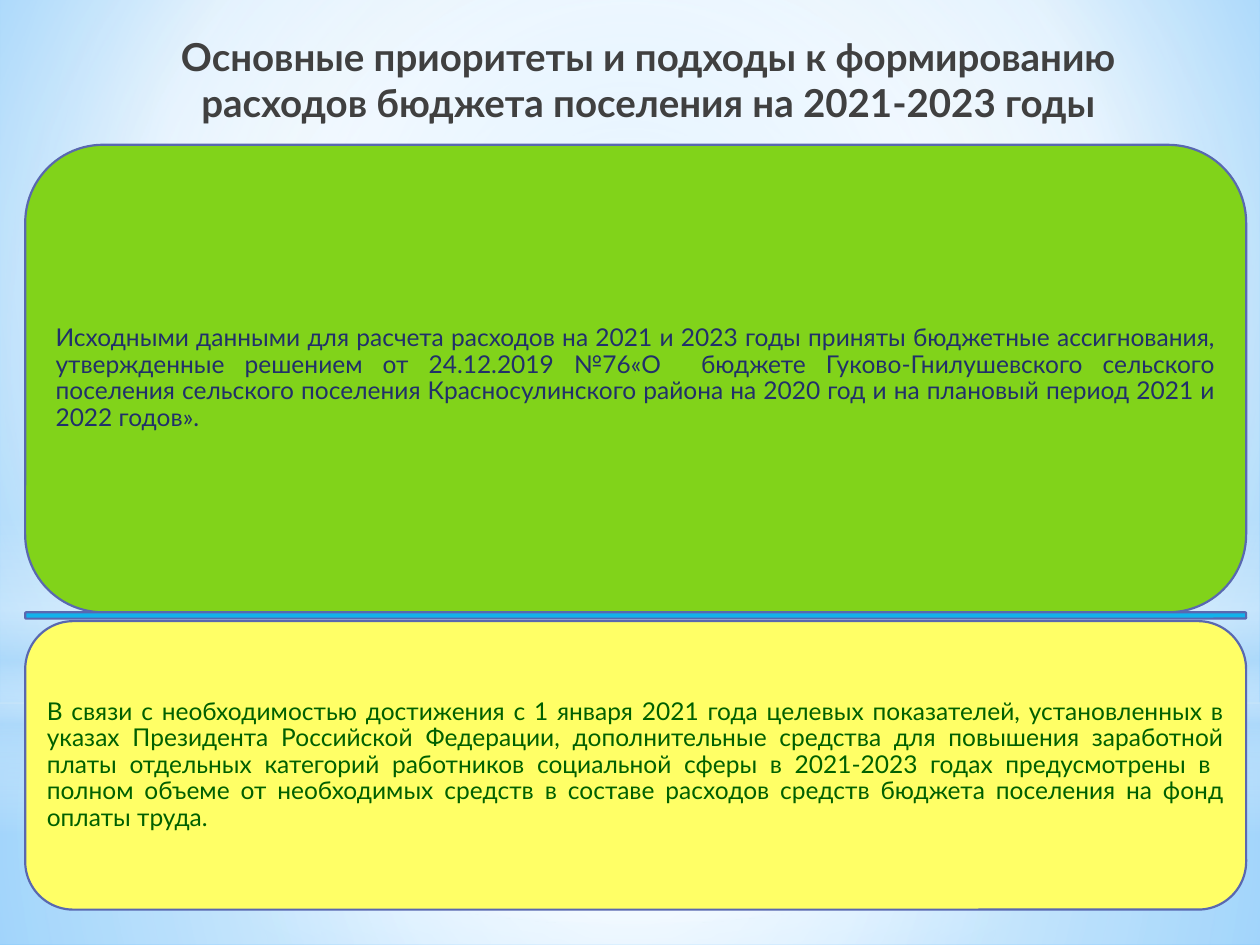
"""Build a slide on the spending priorities of a settlement budget for 2021-2023."""
from dataclasses import dataclass
from typing import NamedTuple

from lxml.etree import SubElement
from pptx import Presentation
from pptx.dml.color import RGBColor
from pptx.enum.shapes import MSO_SHAPE as Preset
from pptx.enum.text import MSO_ANCHOR as Anchor, MSO_AUTO_SIZE as AutoSize, PP_ALIGN as Align
from pptx.oxml.ns import qn
from pptx.util import Inches, Pt

WIDTH, HEIGHT = Inches(10), Inches(7.5)
TITLE_ONLY = 5


@dataclass(frozen=True)
class Theme:
    font: str = "Lato"
    title_size: float = 22
    body_size: float = 14
    line_width: float = 1.25
    title: str = "404040"
    outline: str = "5968B0"
    green: str = "81D31A"
    blue: str = "12B2EB"
    yellow: str = "FFFF66"
    navy: str = "21306A"
    forest: str = "006000"
    white: str = "FFFFFF"
    haze: str = "B4DCFA"
    sky: str = "9ED5FF"
    deep_sky: str = "5BB9FF"


THEME = Theme()


class Area(NamedTuple):
    """Percentages of the slide's width and height."""
    left: float
    top: float
    width: float
    height: float

    def emu(self) -> tuple[int, ...]:
        return tuple(round(share * side / 100) for share, side in zip(self, (WIDTH, HEIGHT) * 2))


class Stop(NamedTuple):
    position: int
    color: str
    alpha: int = 100


class Glow(NamedTuple):
    area: Area
    stops: tuple[Stop, ...]
    preset: Preset = Preset.RECTANGLE
    linear: bool = False


class Panel(NamedTuple):
    top: float
    height: float
    fill: str
    text: str = ""
    color: str = THEME.navy


WHITE, HAZE = THEME.white, THEME.haze
SKY_STOPS = (Stop(0, THEME.sky), Stop(60, WHITE), Stop(100, THEME.deep_sky))
GLOWS = (
    Glow(Area(0, 74.4, 100, 25.6), (Stop(0, WHITE, 91), Stop(37, WHITE, 76), Stop(100, HAZE, 79))),
    Glow(Area(0, 0, 100, 74.4), (Stop(0, WHITE, 89), Stop(48, WHITE, 62), Stop(100, HAZE, 79))),
    Glow(Area(0, 54.93, 100, 33.33),
         (Stop(0, WHITE, 0), Stop(29, WHITE, 30), Stop(45, HAZE, 40),
          Stop(55, WHITE, 26), Stop(65, HAZE, 60), Stop(100, WHITE, 0)), linear=True),
    Glow(Area(0, 23.33, 100, 74.4), (Stop(0, WHITE), Stop(56, WHITE, 0)), Preset.OVAL),
)
HEADING = "Основные приоритеты и подходы к формированию расходов бюджета поселения на 2021-2023 годы"
PANELS = (
    Panel(15.33, 49.47, THEME.green,
          "Исходными данными для расчета расходов на 2021 и 2023 годы приняты бюджетные "
          "ассигнования, утвержденные решением от 24.12.2019 №76«О  бюджете Гуково-Гнилушевского "
          "сельского поселения сельского поселения Краcносулинского района на 2020 год и на "
          "плановый период 2021 и 2022 годов»."),
    Panel(64.8, 0.67, THEME.blue),
    Panel(65.73, 30.53, THEME.yellow,
          "В связи с необходимостью достижения с 1 января 2021 года целевых показателей, "
          "установленных в указах Президента Российской Федерации, дополнительные средства для "
          "повышения заработной платы отдельных категорий работников социальной сферы в 2021-2023 "
          "годах предусмотрены в  полном объеме от необходимых средств в составе расходов средств "
          "бюджета поселения на фонд оплаты труда.", THEME.forest),
)


def set_gradient(fill, holder, stops: tuple[Stop, ...], focus=(50, 50, 50, 50), linear=False) -> None:
    fill.gradient()
    gradient = holder.find(".//" + qn("a:gradFill"))
    for child in list(gradient):
        gradient.remove(child)
    stop_list = SubElement(gradient, qn("a:gsLst"))
    for position, color, alpha in stops:
        stop = SubElement(stop_list, qn("a:gs"), pos=str(position * 1000))
        tint = SubElement(stop, qn("a:srgbClr"), val=color)
        if alpha < 100:
            SubElement(tint, qn("a:alpha"), val=str(alpha * 1000))
    if linear:
        SubElement(gradient, qn("a:lin"), ang="5400000", scaled="0")
    else:
        circle = SubElement(gradient, qn("a:path"), {"path": "circle"})
        SubElement(circle, qn("a:fillToRect"),
                   {side: str(share * 1000) for side, share in zip("ltrb", focus)})


def write(frame, text: str, *, size: float, color: str, align: Align, anchor: Anchor,
          bold: bool = False, spacing: float = 1.0, margins=(0.06, 0.06, 0.06, 0.06)) -> None:
    frame.word_wrap = True
    frame.auto_size = AutoSize.NONE
    frame.vertical_anchor = anchor
    (frame.margin_left, frame.margin_top,
     frame.margin_right, frame.margin_bottom) = map(Inches, margins)
    paragraph = frame.paragraphs[0]
    paragraph.alignment = align
    paragraph.line_spacing = spacing
    run = paragraph.add_run()
    run.text = text
    run.font.name = THEME.font
    run.font.size = Pt(size)
    run.font.bold = bold
    run.font.color.rgb = RGBColor.from_string(color)


def draw_glow(slide, glow: Glow) -> None:
    light = slide.shapes.add_shape(glow.preset, *glow.area.emu())
    light.shadow.inherit = False
    light.line.fill.background()
    set_gradient(light.fill, light._element.spPr, glow.stops, linear=glow.linear)


def draw_heading(slide) -> None:
    heading = slide.shapes.title
    heading.left, heading.top, heading.width, heading.height = Area(7.5, 2.8, 87.4, 11.6).emu()
    write(heading.text_frame, HEADING, size=THEME.title_size, color=THEME.title, bold=True,
          align=Align.CENTER, anchor=Anchor.TOP, margins=(0.15, 0.05, 0.1, 0.05))
    slide.shapes._spTree.append(heading._element)


def draw_panel(slide, panel: Panel) -> None:
    box = slide.shapes.add_shape(Preset.ROUNDED_RECTANGLE,
                                 *Area(2, panel.top, 96.9, panel.height).emu())
    box.shadow.inherit = False
    box.fill.solid()
    box.fill.fore_color.rgb = RGBColor.from_string(panel.fill)
    box.line.color.rgb = RGBColor.from_string(THEME.outline)
    box.line.width = Pt(THEME.line_width)
    if panel.text:
        write(box.text_frame, panel.text, size=THEME.body_size, color=panel.color,
              align=Align.JUSTIFY, anchor=Anchor.MIDDLE, spacing=0.9)


def main() -> None:
    deck = Presentation()
    deck.slide_width, deck.slide_height = WIDTH, HEIGHT
    slide = deck.slides.add_slide(deck.slide_layouts[TITLE_ONLY])
    set_gradient(slide.background.fill, slide._element, SKY_STOPS, focus=(20, 10, 20, 60))
    for glow in GLOWS:
        draw_glow(slide, glow)
    draw_heading(slide)
    for panel in PANELS:
        draw_panel(slide, panel)
    deck.save("out.pptx")


if __name__ == "__main__":
    main()
